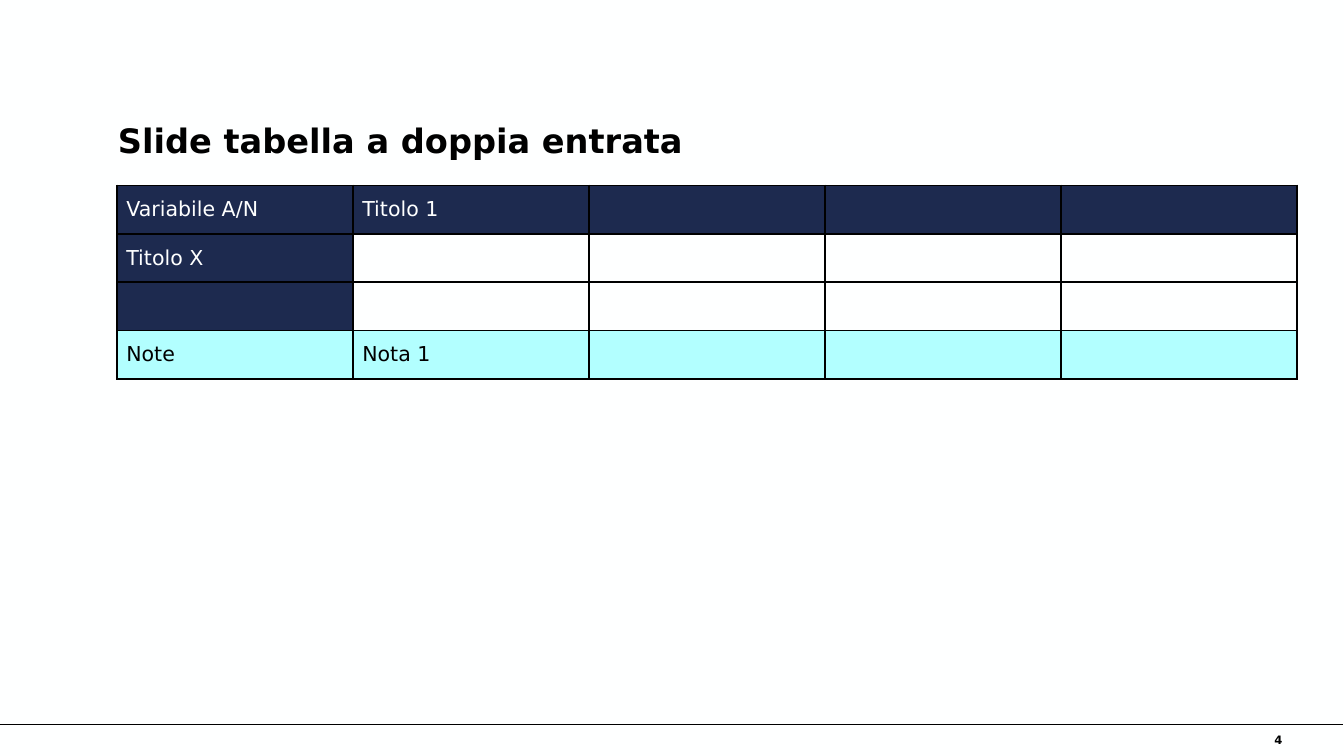
from lxml.etree import SubElement
from pptx import Presentation
from pptx.dml.color import RGBColor
from pptx.enum.shapes import MSO_CONNECTOR
from pptx.enum.text import MSO_ANCHOR, PP_ALIGN
from pptx.oxml.ns import qn
from pptx.util import Inches, Pt

FONT = "DejaVu Sans"
BLACK, WHITE, NAVY, AQUA = "000000", "FEFFFF", "1D2A4F", "B2FFFF"


def color(value):
    return RGBColor.from_string(value)


class SlideBuilder:
    def __init__(self, slide):
        self.s = slide
        bg = slide.background.fill
        bg.solid()
        bg.fore_color.rgb = color(WHITE)

    def add_run(self, p, text, size, c, bold=False):
        r = p.add_run()
        r.text = text
        r.font.name = FONT
        r.font.size = Pt(size)
        r.font.bold = bold
        r.font.color.rgb = color(c)

    def text(self, x, y, w, h, text, size, align=PP_ALIGN.LEFT,
             anchor=MSO_ANCHOR.TOP, inset=0.0, spacing=1.0):
        sp = self.s.shapes.add_textbox(Inches(x), Inches(y), Inches(w), Inches(h))
        tf = sp.text_frame
        tf.word_wrap = True
        tf.vertical_anchor = anchor
        tf.margin_top = tf.margin_bottom = Inches(inset)
        p = tf.paragraphs[0]
        p.alignment = align
        p.line_spacing = spacing
        self.add_run(p, text, size, BLACK, bold=True)

    def line(self, x1, y1, x2, y2, width):
        ln = self.s.shapes.add_connector(
            MSO_CONNECTOR.STRAIGHT, Inches(x1), Inches(y1), Inches(x2), Inches(y2))
        ln.line.color.rgb = color(BLACK)
        ln.line.width = Pt(width)
        SubElement(ln._element.spPr, qn("a:effectLst"))

    def borders(self, cell, width):
        tcPr = cell._tc.get_or_add_tcPr()
        for side in ("lnL", "lnR", "lnT", "lnB"):
            ln = SubElement(tcPr, qn("a:" + side), w=str(Pt(width)))
            fill = SubElement(ln, qn("a:solidFill"))
            SubElement(fill, qn("a:srgbClr"), val=BLACK)

    def cell(self, cell, text, fill, c, size=11):
        cell.margin_left = cell.margin_right = Inches(0.07)
        cell.margin_top = cell.margin_bottom = Inches(0.04)
        cell.vertical_anchor = MSO_ANCHOR.MIDDLE
        self.borders(cell, 1)
        if fill:
            cell.fill.solid()
            cell.fill.fore_color.rgb = color(fill)
        else:
            cell.fill.background()
        p = cell.text_frame.paragraphs[0]
        if text:
            self.add_run(p, text, size, c)
        else:
            # Keeps an empty cell from stretching its row
            SubElement(p._p, qn("a:endParaRPr"), sz=str(size * 100))

    def table(self, x, y, w, h, rows, cols, texts):
        tbl = self.s.shapes.add_table(
            rows, cols, Inches(x), Inches(y), Inches(w), Inches(h)).table
        tbl.first_row = tbl.horz_banding = False
        for i in range(rows):
            for j in range(cols):
                if i == rows - 1:
                    fill, c = AQUA, BLACK
                elif i == 0 or j == 0:
                    fill, c = NAVY, WHITE
                else:
                    fill, c = None, BLACK
                self.cell(tbl.cell(i, j), texts.get((i, j)), fill, c)


def main():
    prs = Presentation()
    # 16:9 format
    prs.slide_width, prs.slide_height = Inches(10), Inches(10 * 9 / 16)
    b = SlideBuilder(prs.slides.add_slide(prs.slide_layouts[6]))

    # Footer
    b.text(8.53, 5.4, 1.11, 0.21, "4", 6.2, PP_ALIGN.RIGHT, MSO_ANCHOR.MIDDLE)
    b.line(-0.01, 5.39, 9.99, 5.39, 0.5)

    # Title
    b.text(0.78, 0.78, 8.96, 0.7, "Slide tabella a doppia entrata", 18,
           inset=0.05, spacing=1.2)

    # Two-way table
    b.table(0.87, 1.38, 8.78, 1.44, 4, 5, {
        (0, 0): "Variabile A/N", (0, 1): "Titolo 1",
        (1, 0): "Titolo X",
        (3, 0): "Note", (3, 1): "Nota 1",
    })

    prs.save("out.pptx")


if __name__ == "__main__":
    main()
